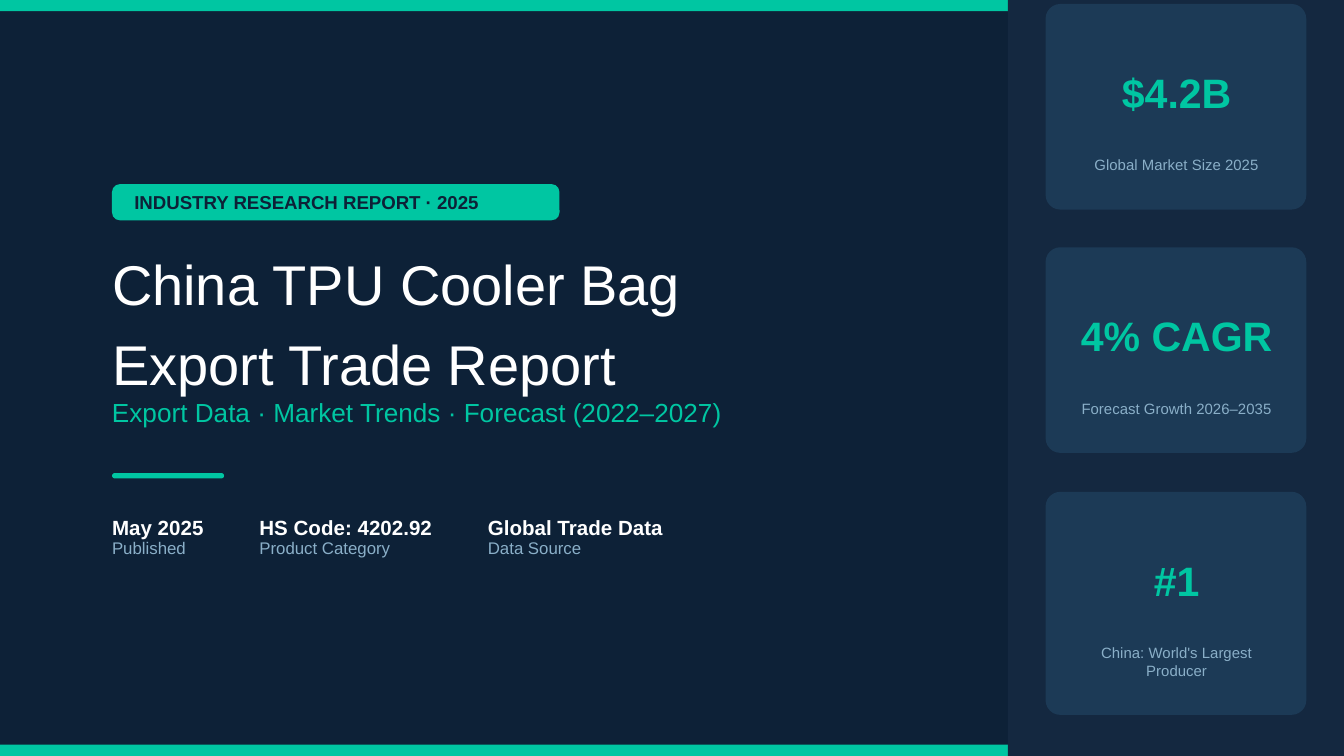
from pptx import Presentation
from pptx.dml.color import RGBColor
from pptx.enum.shapes import MSO_SHAPE
from pptx.enum.text import MSO_ANCHOR, MSO_AUTO_SIZE, PP_ALIGN
from pptx.util import Inches, Pt

NAVY, PANEL, CARD = "0D2137", "142840", "1C3A56"
TEAL, WHITE, MUTED = "00C6A2", "FFFFFF", "8AAFC8"
WIDTH = 10
HEIGHT = WIDTH * 9 / 16
LEFT = WIDTH / 12
BAR = WIDTH / 120

deck = Presentation()
deck.slide_width, deck.slide_height = Inches(WIDTH), Inches(HEIGHT)
page = deck.slides.add_slide(deck.slide_layouts[5])
page.background.fill.solid()
page.background.fill.fore_color.rgb = RGBColor.from_string(NAVY)


def add_block(left, top, width, height, color, radius=0):
    kind = MSO_SHAPE.ROUNDED_RECTANGLE if radius else MSO_SHAPE.RECTANGLE
    block = page.shapes.add_shape(
        kind, Inches(left), Inches(top), Inches(width), Inches(height))
    if radius:
        block.adjustments[0] = radius / min(width, height)
    block.shadow.inherit = False
    block.fill.solid()
    block.fill.fore_color.rgb = RGBColor.from_string(color)
    block.line.fill.background()


def write(left, top, width, height, lines, size, color, bold=False,
          box=None, **paragraph_format):
    position = [Inches(value) for value in (left, top, width, height)]
    box = box or page.shapes.add_textbox(*position)
    box.left, box.top, box.width, box.height = position
    frame = box.text_frame
    frame_format = {
        "margin_left": 0, "margin_right": 0, "margin_top": 0,
        "margin_bottom": 0, "word_wrap": True,
        "auto_size": MSO_AUTO_SIZE.NONE, "vertical_anchor": MSO_ANCHOR.TOP,
    }
    for name, value in frame_format.items():
        setattr(frame, name, value)
    frame.text = lines
    for para in frame.paragraphs:
        for name, value in paragraph_format.items():
            setattr(para, name, value)
        for span in para.runs:
            font_format = {"name": "Arial", "size": Pt(size), "bold": bold}
            for name, value in font_format.items():
                setattr(span.font, name, value)
            span.font.color.rgb = RGBColor.from_string(color)


# Top and bottom bars
for top in (0, HEIGHT - BAR):
    add_block(0, top, WIDTH, BAR, TEAL)

# Report tag
add_block(LEFT, 1.37, 3.33, 0.27, TEAL, radius=0.06)
write(1, 1.42, 3.06, 0.16, "INDUSTRY RESEARCH REPORT · 2025", 10, NAVY, bold=True)

# Title, subtitle and accent rule
write(LEFT, 1.88, 8.5, 0.96, "China TPU Cooler Bag\nExport Trade Report", 30, WHITE,
      box=page.shapes.title, alignment=PP_ALIGN.LEFT,
      line_spacing=Pt(34.5), space_after=Pt(8))
write(LEFT, 2.95, 8.5, 0.23,
      "Export Data · Market Trends · Forecast (2022–2027)", 14, TEAL)
add_block(LEFT, 3.52, LEFT, 0.04, TEAL, radius=0.02)

# Publication facts
facts = [
    (LEFT, 0.69, "May 2025", "Published"),
    (1.93, 1.31, "HS Code: 4202.92", "Product Category"),
    (3.63, 1.32, "Global Trade Data", "Data Source"),
]
for left, width, value, label in facts:
    write(left, 3.83, width, 0.17, value, 11, WHITE, bold=True)
    write(left, 4, width, 0.15, label, 9, MUTED)

# Side panel with key figures
add_block(7.5, 0, 2.5, HEIGHT, PANEL)
figures = [
    (0.03, 1.53, "$4.2B", "Global Market Size 2025"),
    (1.84, 1.53, "4% CAGR", "Forecast Growth 2026–2035"),
    (3.66, 1.66, "#1", "China: World's Largest Producer"),
]
for top, height, value, label in figures:
    add_block(7.78, top, 1.94, height, CARD, radius=0.11)
    write(7.99, top + 0.47, 1.53, 0.35, value, 22, TEAL, bold=True,
          alignment=PP_ALIGN.CENTER)
    write(7.99, top + 1.13, 1.53, height - 1.41, label, 8, MUTED,
          alignment=PP_ALIGN.CENTER)

deck.save("out.pptx")
